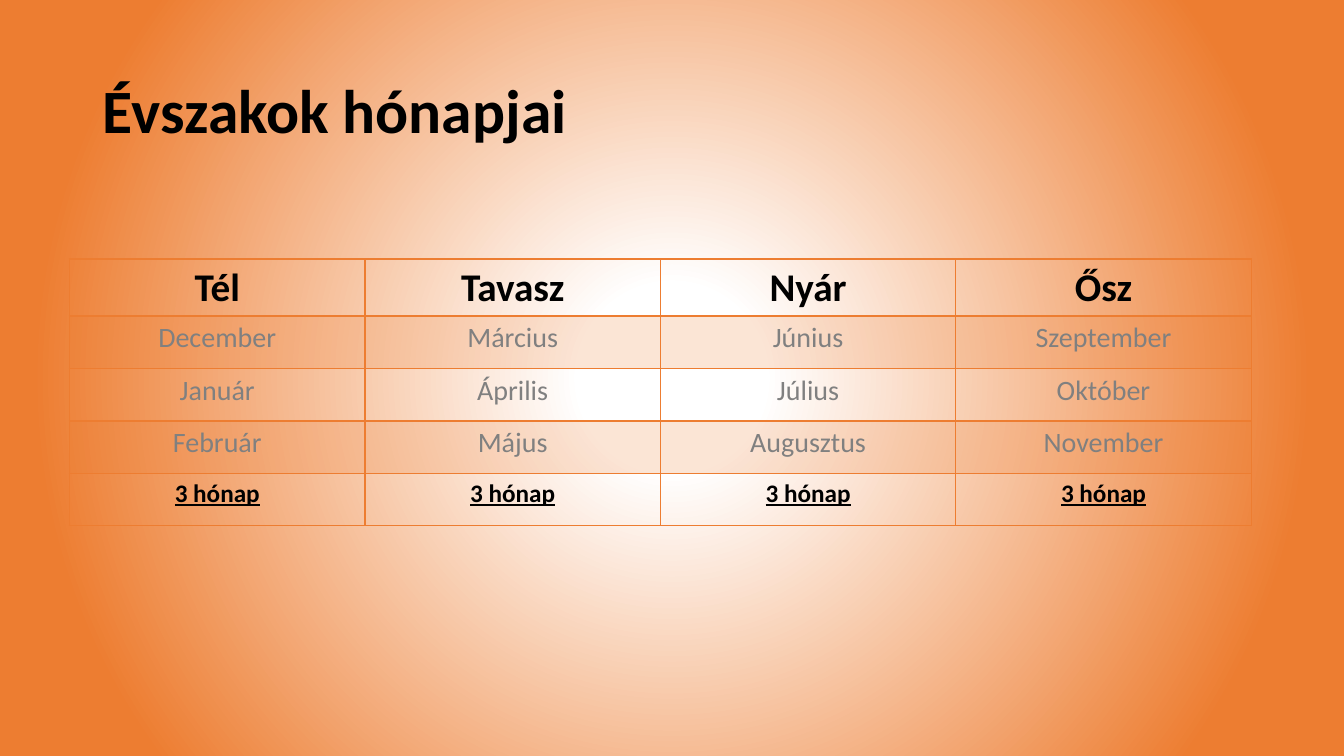
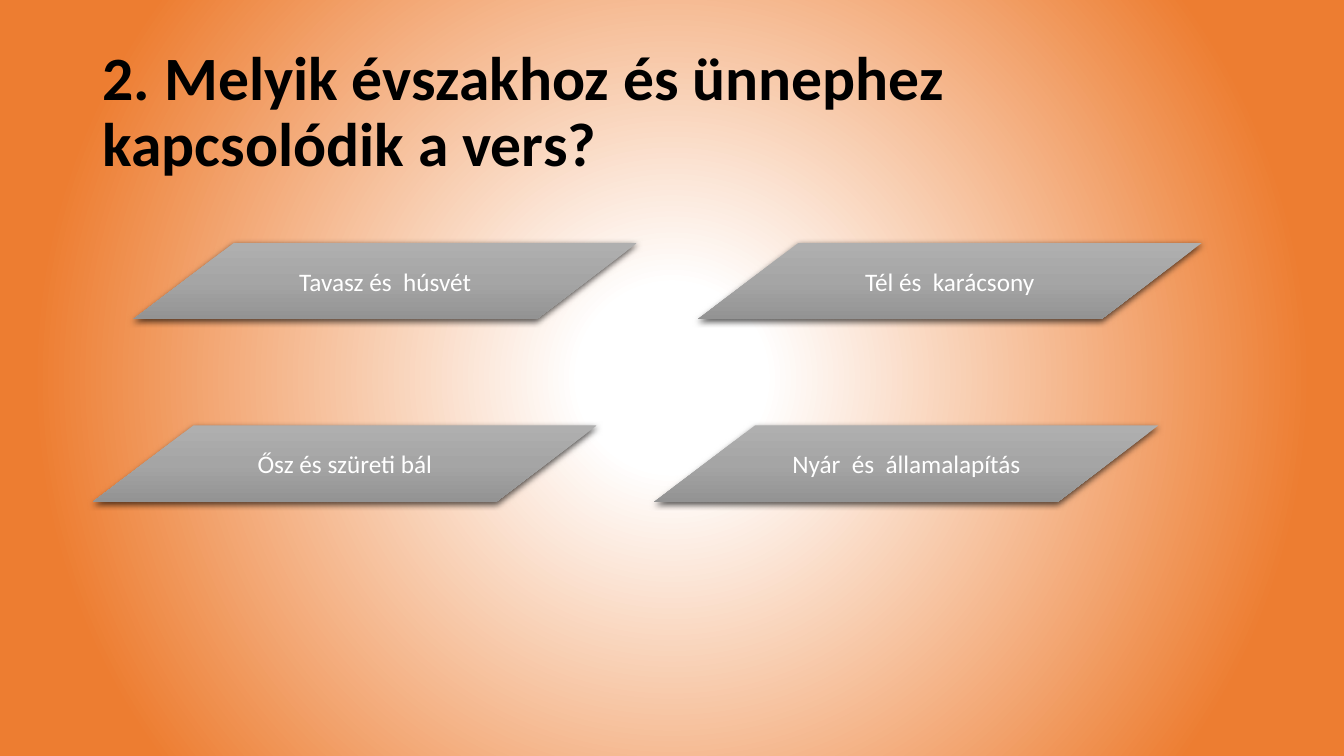
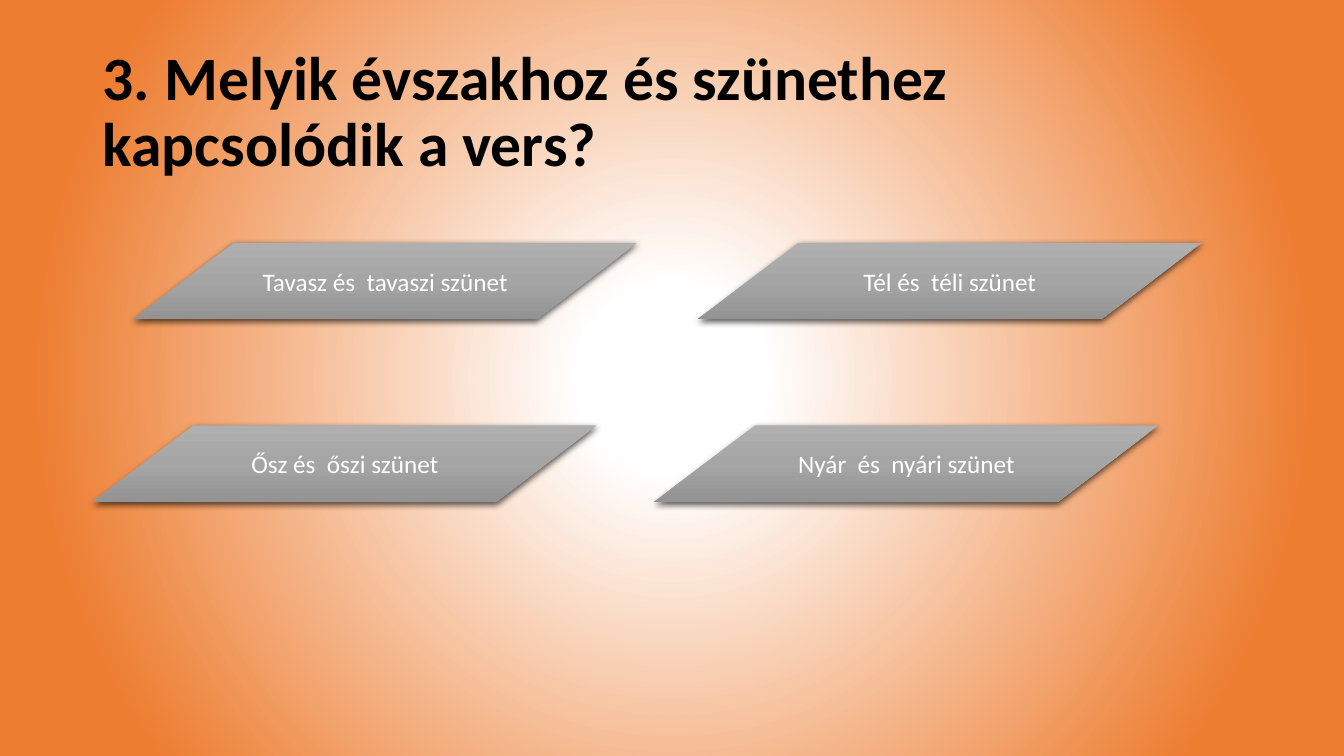
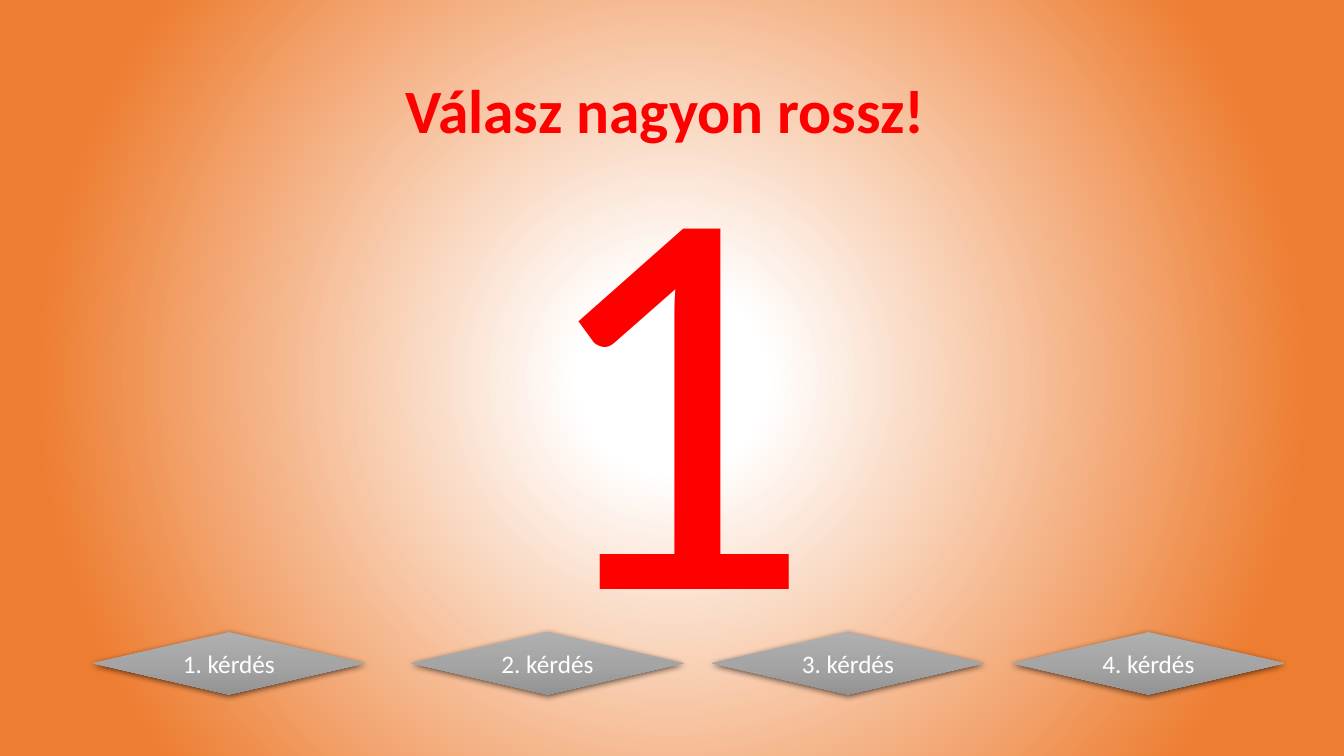
import pptx
import pptx.dml.color
import pptx.enum.shapes
import pptx.enum.text
import pptx.oxml
import pptx.oxml.ns
import pptx.util

Inches = pptx.util.Inches
Pt = pptx.util.Pt
PP_ALIGN = pptx.enum.text.PP_ALIGN
MSO_ANCHOR = pptx.enum.text.MSO_ANCHOR
MSO_SHAPE = pptx.enum.shapes.MSO_SHAPE
NAMESPACE = pptx.oxml.ns.nsdecls("a")

FONT = "Calibri"
COLORS = {
    "orange": "ED7D31",
    "white": "FFFFFF",
    "black": "000000",
    "red": "FF0000",
    "grey_text": "808080",
    "button_top": "AFAFAF",
    "button_middle": "A5A5A5",
    "button_bottom": "939393",
}
BACKGROUND_STOPS = [(1, "white"), (12, "white"), (83, "orange"), (100, "orange")]
BUTTON_STOPS = [(0, "button_top"), (50, "button_middle"), (100, "button_bottom")]
RADIAL = ('<a:path path="circle"><a:fillToRect l="50000" t="50000" '
          'r="50000" b="50000"/></a:path>')
DOWNWARD = '<a:lin ang="5400000" scaled="0"/>'

# Answer buttons: left, top
ANSWER_PLACES = [(1.32, 2.41), (6.92, 2.41), (0.92, 4.22), (6.49, 4.22)]
QUESTION_LEFTS = [0.92, 4.08, 7.06, 10.04]


# Fills and effects
def set_gradient(fill, element, stops, direction):
    """Give the fill found inside element any number of gradient stops."""
    fill.gradient()
    stop_xml = "".join(
        f'<a:gs pos="{position * 1000}"><a:srgbClr val="{COLORS[color]}"/></a:gs>'
        for position, color in stops)
    gradient = pptx.oxml.parse_xml(
        f'<a:gradFill {NAMESPACE} rotWithShape="1"><a:gsLst>{stop_xml}</a:gsLst>'
        f'{direction}</a:gradFill>')
    default = element.find(".//" + pptx.oxml.ns.qn("a:gradFill"))
    default.getparent().replace(default, gradient)


def add_shadow(shape):
    shape.shadow.inherit = False
    effects = shape.element.spPr.find(pptx.oxml.ns.qn("a:effectLst"))
    effects.append(pptx.oxml.parse_xml(
        f'<a:outerShdw {NAMESPACE} blurRad="{Pt(4.5)}" dist="{Pt(1.5)}" '
        f'dir="5400000" algn="ctr" rotWithShape="0">'
        f'<a:srgbClr val="{COLORS["black"]}"><a:alpha val="63000"/></a:srgbClr>'
        f'</a:outerShdw>'))


# Text
def write_text(text_frame, text, size, color, align=PP_ALIGN.CENTER,
               bold=False, underline=False):
    paragraph = text_frame.paragraphs[0]
    paragraph.text = text
    paragraph.alignment = align
    font = paragraph.font
    font.name = FONT
    font.size = Pt(size)
    font.bold = bold
    font.underline = underline
    font.color.rgb = pptx.dml.color.RGBColor.from_string(COLORS[color])
    return paragraph


def add_text(slide, text, top, height, size, color, anchor, **style):
    box = slide.shapes.add_textbox(Inches(0.92), Inches(top), Inches(11.5), Inches(height))
    box.text_frame.word_wrap = True
    box.text_frame.vertical_anchor = anchor
    paragraph = write_text(box.text_frame, text, size, color, **style)
    paragraph.line_spacing = 0.9
    return paragraph


def add_title(slide, text, color="black", align=PP_ALIGN.LEFT):
    add_text(slide, text, 0.4, 1.45, 44, color, MSO_ANCHOR.MIDDLE, align=align, bold=True)


# Buttons
def add_button(slide, kind, text, left, top, width, height):
    button = slide.shapes.add_shape(
        kind, Inches(left), Inches(top), Inches(width), Inches(height))
    set_gradient(button.fill, button.element.spPr, BUTTON_STOPS, DOWNWARD)
    button.line.fill.background()
    add_shadow(button)
    button.text_frame.vertical_anchor = MSO_ANCHOR.MIDDLE
    write_text(button.text_frame, text, 18, "white")


# Table
def style_cell(cell, top_width, bottom_width, shaded):
    properties = cell._tc.get_or_add_tcPr()
    for side, width in (("L", 1), ("R", 1), ("T", top_width), ("B", bottom_width)):
        properties.append(pptx.oxml.parse_xml(
            f'<a:ln{side} {NAMESPACE} w="{Pt(width)}"><a:solidFill>'
            f'<a:srgbClr val="{COLORS["orange"]}"/></a:solidFill></a:ln{side}>'))
    if shaded:
        properties.append(pptx.oxml.parse_xml(
            f'<a:solidFill {NAMESPACE}><a:srgbClr val="{COLORS["orange"]}">'
            f'<a:alpha val="20000"/></a:srgbClr></a:solidFill>'))
    else:
        cell.fill.background()


def add_season_table(slide, rows):
    table = slide.shapes.add_table(
        len(rows), len(rows[0]), Inches(0.69), Inches(2.57),
        Inches(11.72), Inches(0.52 * len(rows))).table
    table.horz_banding = False
    header_style = dict(size=28, color="black", bold=True)
    month_style = dict(size=20, color="grey_text")
    total_style = dict(size=18, color="black", bold=True, underline=True)
    styles = [header_style] + [month_style] * (len(rows) - 2) + [total_style]
    for row, (texts, style) in enumerate(zip(rows, styles)):
        for column, text in enumerate(texts):
            cell = table.cell(row, column)
            style_cell(cell, top_width=2 if row == 1 else 1,
                       bottom_width=2 if row == 0 else 1, shaded=row % 2 == 1)
            write_text(cell.text_frame, text, **style)


# Slides
def add_slide(presentation):
    return presentation.slides.add_slide(presentation.slide_layouts[6])


def add_months_slide(presentation):
    slide = add_slide(presentation)
    add_title(slide, "Évszakok hónapjai")
    add_season_table(slide, [
        ["Tél", "Tavasz", "Nyár", "Ősz"],
        ["December", "Március", "Június", "Szeptember"],
        ["Január", "Április", "Július", "Október"],
        ["Február", "Május", "Augusztus", "November"],
        ["3 hónap"] * 4,
    ])


def add_question_slide(presentation, question, answers):
    slide = add_slide(presentation)
    add_title(slide, question)
    for answer, (left, top) in zip(answers, ANSWER_PLACES):
        add_button(slide, MSO_SHAPE.FLOWCHART_DATA, answer, left, top, 5, 0.76)


def add_wrong_answer_slide(presentation):
    slide = add_slide(presentation)
    add_title(slide, "Válasz nagyon rossz! ", "red", PP_ALIGN.CENTER)
    grade = add_text(slide, "1", 1, 4.54, 400, "red", MSO_ANCHOR.TOP)
    grade.space_before = Pt(10)
    for number, left in enumerate(QUESTION_LEFTS, start=1):
        add_button(slide, MSO_SHAPE.FLOWCHART_DECISION, f"{number}. kérdés",
                   left, 6.27, 2.7, 0.62)


def main():
    presentation = pptx.Presentation()
    presentation.slide_width = Inches(13.33)
    presentation.slide_height = Inches(7.5)
    master = presentation.slide_master
    set_gradient(master.background.fill, master.element, BACKGROUND_STOPS, RADIAL)

    add_months_slide(presentation)
    add_question_slide(
        presentation, "2. Melyik évszakhoz és ünnephez kapcsolódik a vers?",
        ["Tavasz és  húsvét", "Tél és  karácsony",
         "Ősz és szüreti bál", "Nyár  és  államalapítás"])
    add_question_slide(
        presentation, "3. Melyik évszakhoz és szünethez kapcsolódik a vers?",
        ["Tavasz és  tavaszi szünet", "Tél és  téli szünet",
         "Ősz és  őszi szünet", "Nyár  és  nyári szünet"])
    add_wrong_answer_slide(presentation)
    presentation.save("out.pptx")


if __name__ == "__main__":
    main()
